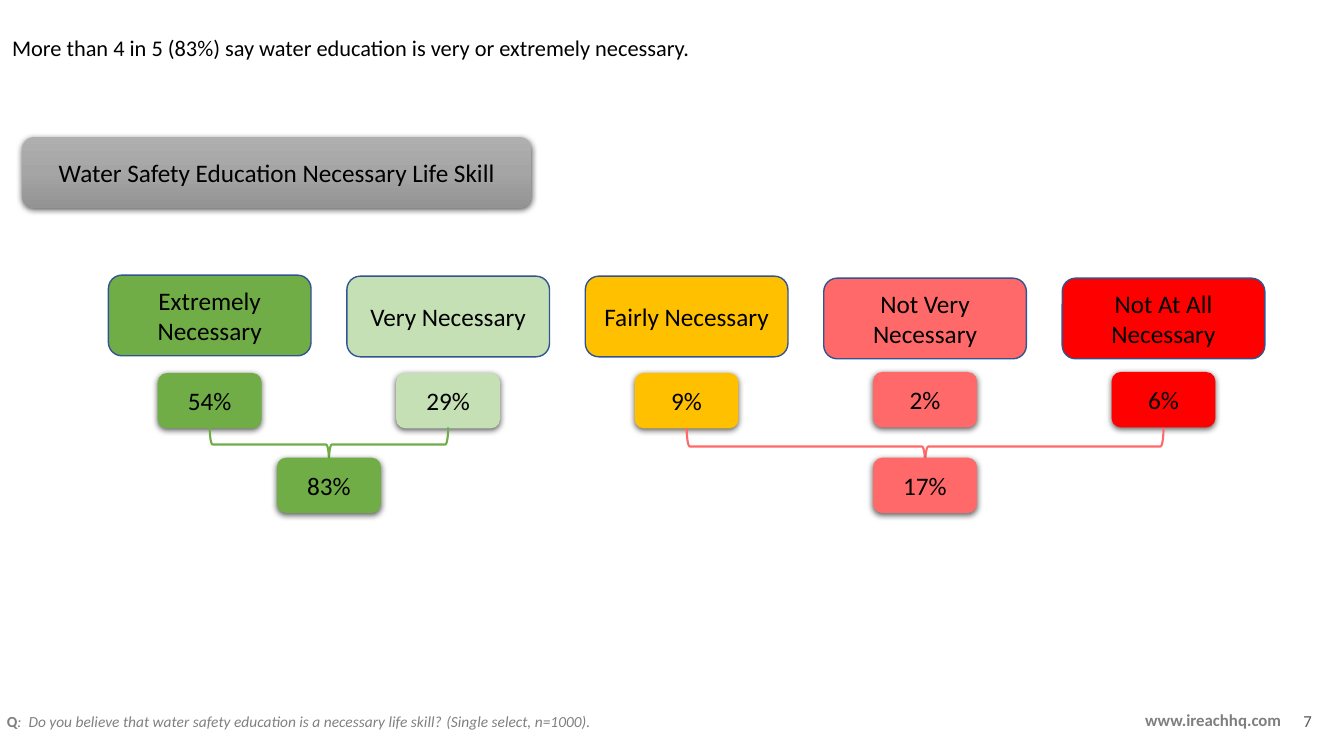
from copy import deepcopy

from lxml import etree
from pptx import Presentation
from pptx import util as u
from pptx.dml import color
from pptx.enum import shapes, text
from pptx.oxml import ns

FIRST_CENTER, COLUMN_STEP = 2.08, 2.365
BADGE_WIDTH, BADGE_HEIGHT = 1.03, 0.55
ANSWERS = [
    ("Extremely Necessary", "54%", "70AD47", 2.73, 3.7),
    ("Very Necessary", "29%", "C5E0B4", 2.74, 3.7),
    ("Fairly Necessary", "9%", "FFC000", 2.74, 3.7),
    ("Not Very Necessary", "2%", "FF6969", 2.76, 3.69),
    ("Not At All Necessary", "6%", "FF0000", 2.76, 3.69),
]
TOTALS = [
    ("83%", "70AD47", 0, 1, 4.41, 0.34),
    ("17%", "FF6969", 2, 4, 4.43, 0.37),
]


def rgb(value):
    return color.RGBColor.from_string(value)


def inches(*values):
    return [u.Inches(value) for value in values]


def column_center(index):
    return FIRST_CENTER + index * COLUMN_STEP


def set_all(target, values):
    for name, value in values.items():
        setattr(target, name, value)


def write(frame, runs, frame_format=None, para_format=None):
    set_all(frame, {"word_wrap": True, "auto_size": text.MSO_AUTO_SIZE.NONE,
                    "vertical_anchor": text.MSO_ANCHOR.TOP, **(frame_format or {})})
    para = frame.paragraphs[0]
    set_all(para, {"alignment": text.PP_ALIGN.LEFT, **(para_format or {})})
    for words, size, shade, style in runs:
        span = para.add_run()
        span.text = words
        set_all(span.font, {"name": "Calibri", "size": u.Pt(size), **style})
        span.font.color.rgb = rgb(shade)


def add_text(page, place, runs, frame_format=None, para_format=None):
    box = page.shapes.add_textbox(*inches(*place))
    write(box.text_frame, runs, frame_format, para_format)


def add_box(page, place, words, fill):
    box = page.shapes.add_shape(shapes.MSO_SHAPE.ROUNDED_RECTANGLE, *inches(*place))
    box.shadow.inherit = False
    box.fill.solid()
    box.fill.fore_color.rgb = rgb(fill)
    box.line.fill.background()
    write(box.text_frame, [(words, 18, "000000", {})],
          {"vertical_anchor": text.MSO_ANCHOR.MIDDLE},
          {"alignment": text.PP_ALIGN.CENTER})
    return box


def outline(shape, shade, width):
    shape.line.color.rgb = rgb(shade)
    shape.line.width = u.Pt(width)


def add_shadow(shape):
    effects = shape._element.spPr.find(ns.qn("a:effectLst"))
    shadow = etree.SubElement(effects, ns.qn("a:outerShdw"), blurRad=str(u.Pt(4.5)),
                              dist=str(u.Pt(1.5)), dir="5400000",
                              algn="ctr", rotWithShape="0")
    shade = etree.SubElement(shadow, ns.qn("a:srgbClr"), val="000000")
    etree.SubElement(shade, ns.qn("a:alpha"), val="63000")


def add_badge(page, center, top, words, fill):
    place = (center - BADGE_WIDTH / 2, top, BADGE_WIDTH, BADGE_HEIGHT)
    add_shadow(add_box(page, place, words, fill))


def add_brace(page, center, middle, depth, span, shade):
    brace = page.shapes.add_shape(
        shapes.MSO_SHAPE.RIGHT_BRACE,
        *inches(center - depth / 2, middle - span / 2, depth, span))
    brace.rotation = 90
    brace.shadow.inherit = False
    brace.fill.background()
    outline(brace, shade, 1.5)


def add_heading(page):
    heading = add_box(page, (0.22, 1.36, 5.05, 0.7),
                      "Water Safety Education Necessary Life Skill", "A5A5A5")
    heading.fill.gradient()
    heading.fill.gradient_angle = 270
    stop_list = heading._element.spPr.find(".//" + ns.qn("a:gsLst"))
    stop_list.insert(1, deepcopy(stop_list[0]))
    stop_list[1].set("pos", "50000")
    for stop, shade in zip(heading.fill.gradient_stops, ("AFAFAF", "A5A5A5", "939393")):
        stop.color.rgb = rgb(shade)
    add_shadow(heading)


def add_footer(page):
    add_text(page, (-0.03, 7.02, 11.26, 0.29), [
        ("Q", 11, "7F7F7F", {"bold": True}),
        (":  Do you believe that water safety education is a necessary life skill? ",
         11, "808080", {"italic": True}),
        ("(Single select, n=1000).", 11, "7F7F7F", {"italic": True}),
    ])
    add_text(page, (11.26, 6.96, 1.87, 0.38),
             [("www.ireachhq.com", 12, "7F7F7F", {"bold": True})],
             {"vertical_anchor": text.MSO_ANCHOR.MIDDLE}, {"line_spacing": 0.9})
    add_text(page, (12.83, 7.02, 0.34, 0.4), [("7", 12, "595959", {})],
             para_format={"line_spacing": 0.9})


def main():
    deck = Presentation()
    deck.slide_width, deck.slide_height = inches(13.33, 7.5)
    page = deck.slides.add_slide(deck.slide_layouts[5])

    title = page.shapes.title
    set_all(title, dict(zip(("left", "top", "width", "height"),
                            inches(0.02, 0.29, 10.84, 0.37))))
    write(title.text_frame, [(
        "More than 4 in 5 (83%) say water education is very or extremely necessary.",
        16, "000000", {})])

    add_heading(page)
    for index, (label, share, fill, label_top, badge_top) in enumerate(ANSWERS):
        center = column_center(index)
        label_box = add_box(page, (center - 1.005, label_top, 2.01, 0.8), label, fill)
        outline(label_box, "325491", 1)
        add_badge(page, center, badge_top, share, fill)
    for share, shade, first, last, middle, depth in TOTALS:
        center = column_center((first + last) / 2)
        add_brace(page, center, middle, depth, (last - first) * COLUMN_STEP, shade)
        add_badge(page, center, 4.54, share, shade)
    add_footer(page)
    deck.save("out.pptx")


if __name__ == "__main__":
    main()
